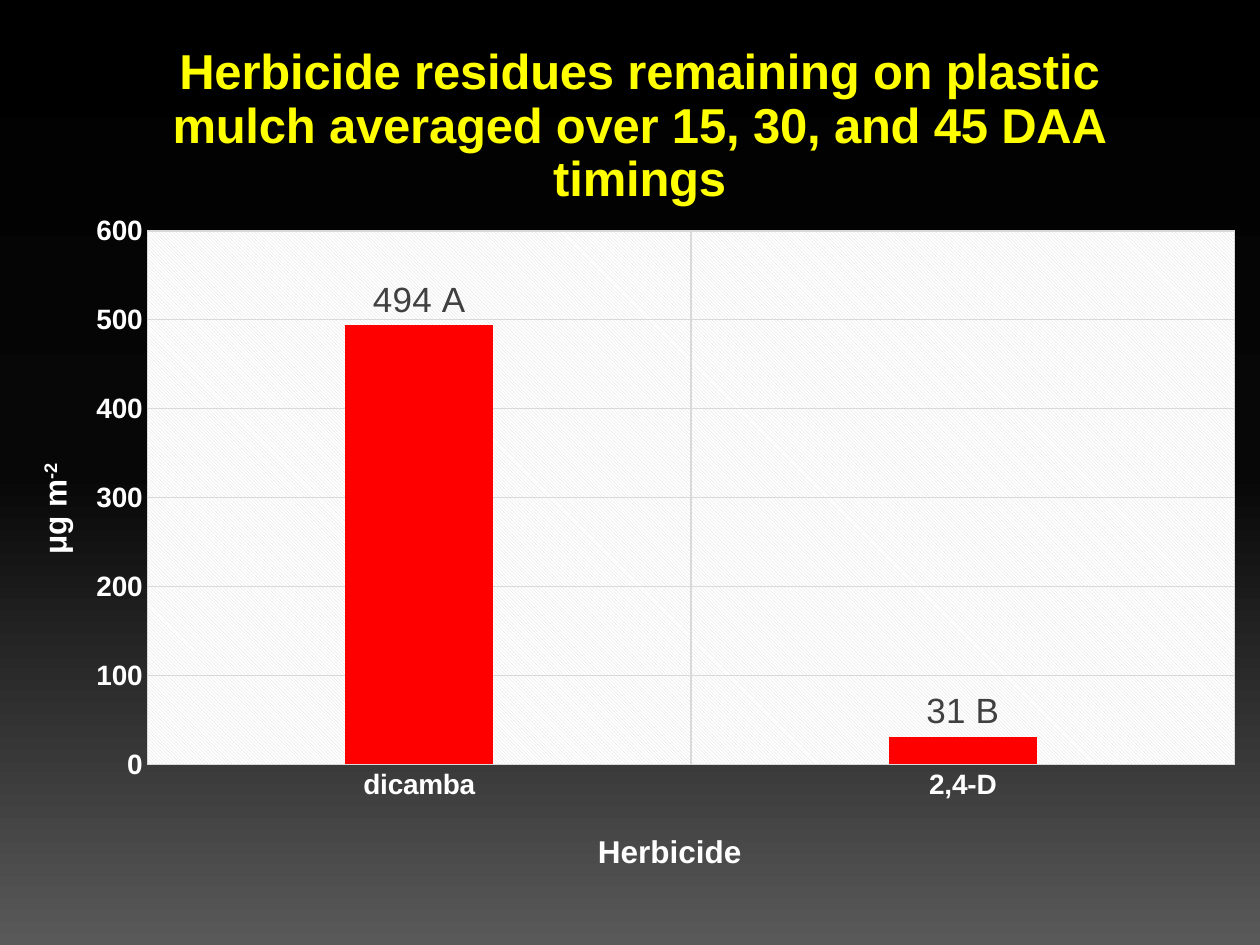
from copy import deepcopy

from pptx import Presentation
from pptx.chart.data import CategoryChartData
from pptx.dml.color import RGBColor
from pptx.enum.chart import XL_CHART_TYPE as ChartType
from pptx.enum.chart import XL_LABEL_POSITION as LabelPosition
from pptx.enum.chart import XL_TICK_MARK as TickMark
from pptx.oxml import parse_xml
from pptx.oxml.ns import nsdecls, qn
from pptx.util import Cm, Pt

COLORS = {
    "top": "000000", "middle": "070707", "bottom": "595959",
    "title": "FFFF00", "axis": "FFFFFF", "grid": "D9D9D9",
    "plot": "FFFFFF", "bar": "FF0000", "label": "404040", "base": "000000",
}
FONT = "Arial"
TITLE = ("Herbicide residues remaining on plastic mulch "
         "averaged over 15, 30, and 45 DAA timings")
RESIDUES = {"dicamba": (494, "494 A"), "2,4-D": (31, "31 B")}


def color(name):
    return RGBColor.from_string(COLORS[name])


def style_font(font, size, name, bold=True):
    font.name = FONT
    font.size = Pt(size)
    font.bold = bold
    font.color.rgb = color(name)


def paint_background(page):
    fill = page.background.fill
    fill.gradient()
    fill.gradient_angle = 270
    last_stop = page.element.findall(".//" + qn("a:gs"))[-1]
    last_stop.addprevious(deepcopy(last_stop))
    for stop, name, position in zip(fill.gradient_stops,
                                    ("top", "middle", "bottom"), (0, 0.5, 1)):
        stop.color.rgb = color(name)
        stop.position = position


def set_layout(parent, index, inner=False, **place):
    """Place a chart part by fractions of the chart's size."""
    old = parent.find(qn("c:layout"))
    if old is not None:
        index = parent.index(old)
        parent.remove(old)
    target = '<c:layoutTarget val="inner"/>' if inner else ""
    modes = "".join(f'<c:{key}Mode val="edge"/>' for key in "xy")
    values = "".join(f'<c:{key} val="{value}"/>' for key, value in place.items())
    parent.insert(index, parse_xml(
        f'<c:layout {nsdecls("c")}><c:manualLayout>{target}{modes}{values}'
        "</c:manualLayout></c:layout>"))


def write_title(title, parts, size, name, x, y):
    """Fill a title from its parts; every part after the first is superscript."""
    para = title.text_frame.paragraphs[0]
    for number, text in enumerate(parts):
        span = para.add_run()
        span.text = text
        style_font(span.font, size, name)
        if number:
            span.font._element.set("baseline", "30000")
    set_layout(title.element, 1, x=x, y=y)


def style_axis(axis):
    axis.major_tick_mark = axis.minor_tick_mark = TickMark.NONE
    style_font(axis.tick_labels.font, 16, "axis")
    axis.has_major_gridlines = True
    line = axis.major_gridlines.format.line
    line.color.rgb = color("grid")
    line.width = Pt(0.75)


def style_plot_area(chart):
    area = chart.element.find(".//" + qn("c:plotArea"))
    set_layout(area, 0, inner=True, x=0.117, y=0.259, w=0.863, h=0.598)
    area.append(parse_xml(
        f'<c:spPr {nsdecls("c", "a")}><a:pattFill prst="ltDnDiag">'
        f'<a:fgClr><a:srgbClr val="{COLORS["grid"]}"/></a:fgClr>'
        f'<a:bgClr><a:srgbClr val="{COLORS["plot"]}"/></a:bgClr>'
        "</a:pattFill><a:ln><a:noFill/></a:ln></c:spPr>"))


def style_bars(plot):
    plot.gap_width = 267
    plot.overlap = -43
    plot.vary_by_categories = False
    series = plot.series[0]
    series.format.fill.solid()
    series.format.fill.fore_color.rgb = color("bar")
    labels = series.data_labels
    labels.show_value = True
    labels.position = LabelPosition.OUTSIDE_END
    style_font(labels.font, 20, "label")
    for number, (_, text) in enumerate(RESIDUES.values()):
        label = series.points[number].data_label
        label.text_frame.text = text
        label.position = LabelPosition.OUTSIDE_END
        style_font(label.text_frame.paragraphs[0].runs[0].font, 20, "label", False)


def add_residue_chart(page, left, top, width, height):
    data = CategoryChartData()
    data.categories = list(RESIDUES)
    data.add_series("Series 1", [value for value, _ in RESIDUES.values()])
    chart = page.shapes.add_chart(ChartType.COLUMN_CLUSTERED,
                                  left, top, width, height, data).chart
    style_font(chart.font, 10, "base", False)
    chart.has_legend = False
    chart.has_title = True
    write_title(chart.chart_title, [TITLE], 28, "title", 0.13, 0.035)

    herbicides, amounts = chart.category_axis, chart.value_axis
    for axis in (herbicides, amounts):
        style_axis(axis)
    write_title(herbicides.axis_title, ["Herbicide"], 18, "axis", 0.47, 0.925)
    write_title(amounts.axis_title, ["μg m", "-2"], 18, "axis", 0.025, 0.515)
    herbicides.format.line.color.rgb = color("grid")
    herbicides.format.line.width = Pt(0.75)
    amounts.format.line.fill.background()
    amounts.minimum_scale, amounts.maximum_scale = 0, 600
    amounts.major_unit = 100
    amounts_body = amounts.axis_title.element.find(".//" + qn("a:bodyPr"))
    amounts_body.set("rot", "-5400000")
    amounts_body.set("vert", "horz")

    style_plot_area(chart)
    style_bars(chart.plots[0])


def main():
    deck = Presentation()
    deck.slide_width, deck.slide_height = Cm(25.4), Cm(19.05)
    page = deck.slides.add_slide(deck.slide_layouts[6])
    paint_background(page)
    add_residue_chart(page, Cm(0), Cm(0), deck.slide_width, Cm(17.98))
    deck.save("out.pptx")


if __name__ == "__main__":
    main()
